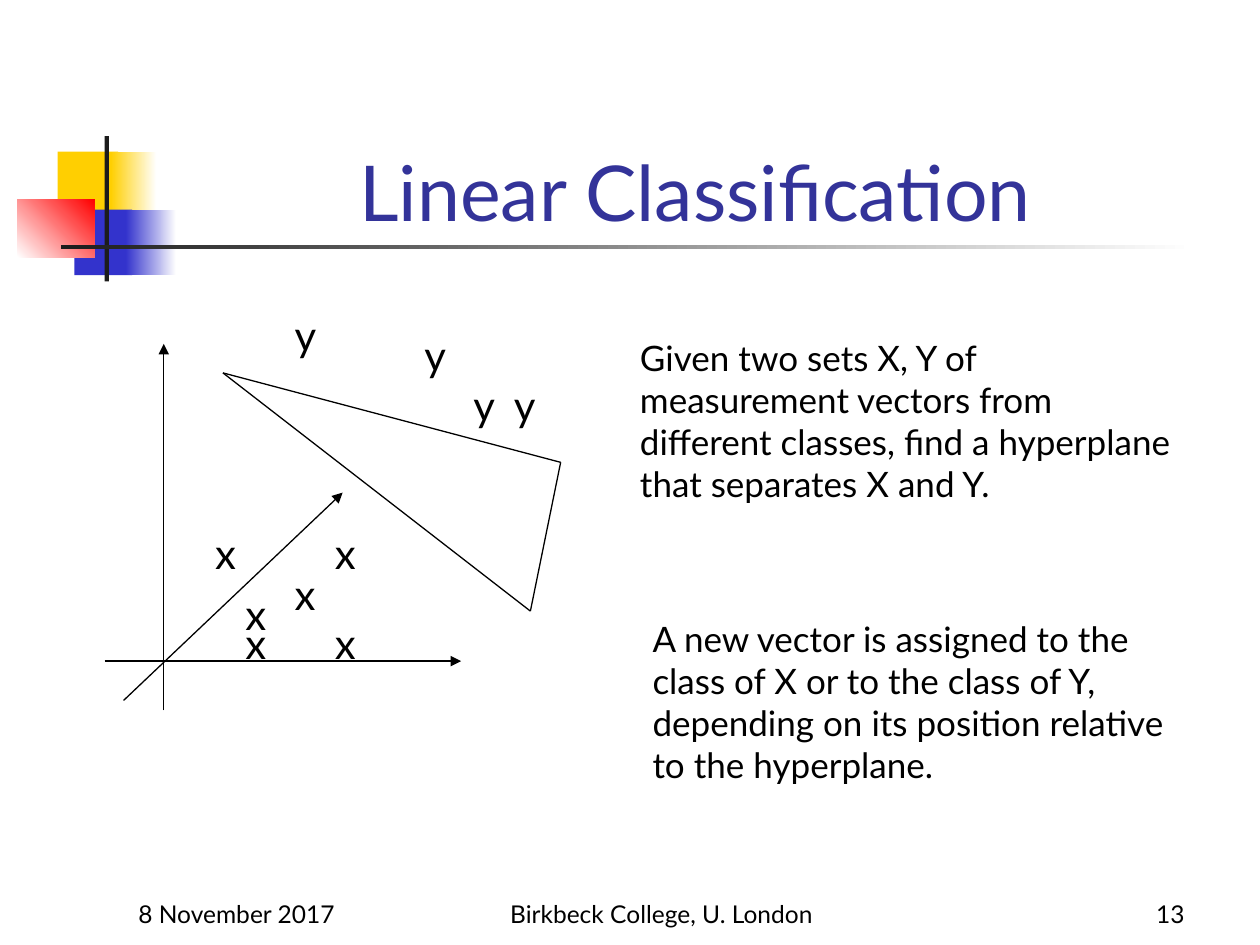
from lxml import etree
from pptx import Presentation
from pptx.dml.color import RGBColor
from pptx.enum import shapes, text
from pptx.oxml.ns import qn
from pptx.util import Pt

FONT = "Lato"
BLACK = RGBColor(0, 0, 0)
WHITE = RGBColor(255, 255, 255)
INK = RGBColor(0x1C, 0x1C, 0x1C)
GOLD = RGBColor(0xFF, 0xCF, 0x01)
BLUE = RGBColor(0x33, 0x33, 0xCC)
NAVY = RGBColor(0x33, 0x33, 0x99)
RED = RGBColor(0xFF, 0, 0)
LEFT, MID, RIGHT = text.PP_ALIGN.LEFT, text.PP_ALIGN.CENTER, text.PP_ALIGN.RIGHT
TOP, BOTTOM = text.MSO_ANCHOR.TOP, text.MSO_ANCHOR.BOTTOM

BARS = [
    ((33, 86.6, 34.5, 37.4), GOLD, None, 0),
    ((63.4, 86.6, 26, 37.4), GOLD, WHITE, 0),
    ((42.5, 119.8, 33, 37.4), BLUE, None, 0),
    ((72, 119.8, 28.8, 37.4), BLUE, WHITE, 0),
    ((10, 113.8, 44, 33.2), WHITE, RED, 45),
    ((59.8, 77.8, 2.5, 83), INK, None, 0),
    ((34.6, 140.1, 648, 2.5), INK, WHITE, 0),
]
AXES = [
    ((93.6, 406), (93.6, 196.5)),
    ((59.8, 377.8), (263.5, 377.8)),
    ((70.6, 400.3), (195.8, 281.5)),
]
PLANE = [(127.4, 213.1), (303.1, 349.2), (320.4, 264.2)]
MARKS = {
    "x": [(161.3, 321.1), (184.3, 298.1), (184.3, 349.2),
          (133.2, 349.2), (115.9, 298.1), (133.2, 332.6)],
    "y": [(161.3, 173.5), (235.4, 185), (263.5, 213.1), (286.6, 213.1)],
}
NOTES = [
    ((358.6, 188.6, 322.6, 103), [
        "Given two sets X, Y of",
        "measurement vectors from",
        "different classes, find a hyperplane",
        "that separates X and Y."]),
    ((365.8, 349.2, 307.4, 103), [
        "A new vector is assigned to the",
        "class of X or to the class of Y,",
        "depending on its position relative",
        "to the hyperplane."]),
]
FOOT = [
    ((72, 498.2, 150, 36), "8 November 2017", LEFT),
    ((264, 498.2, 228, 36), "Birkbeck College, U. London", MID),
    ((534, 498.2, 150, 36), "13", RIGHT),
]


def put(frame, lines, size=24, color=BLACK, align=LEFT, anchor=TOP, wrap=False):
    frame.word_wrap = wrap
    frame.vertical_anchor = anchor
    frame.text = "\n".join(lines)
    for para in frame.paragraphs:
        para.alignment = align
        for run in para.runs:
            run.font.name = FONT
            run.font.size = Pt(size)
            run.font.color.rgb = color


def label(slide, box, lines, **form):
    shape = slide.shapes.add_textbox(*map(Pt, box))
    put(shape.text_frame, lines, **form)


def bar(slide, box, start, end, angle):
    shape = slide.shapes.add_shape(shapes.MSO_SHAPE.RECTANGLE, *map(Pt, box))
    shape.shadow.inherit = False
    shape.line.fill.background()
    if end is None:
        shape.fill.solid()
        shape.fill.fore_color.rgb = start
    else:
        shape.fill.gradient()
        shape.fill.gradient_angle = angle
        for stop, color in zip(shape.fill.gradient_stops, (start, end)):
            stop.color.rgb = color


def line(slide, start, end, arrow=False):
    link = slide.shapes.add_connector(
        shapes.MSO_CONNECTOR.STRAIGHT, *map(Pt, start + end))
    link.line.color.rgb = BLACK
    link.line.width = Pt(0.75)
    if arrow:
        etree.SubElement(link.line._get_or_add_ln(), qn("a:tailEnd"), type="triangle")
    etree.SubElement(link._element.spPr, qn("a:effectLst"))


def title(slide, words):
    shape = slide.shapes.title
    shape.left, shape.top, shape.width, shape.height = map(Pt, (90.7, 49, 613.4, 90))
    put(shape.text_frame, [words], size=44, color=NAVY, align=MID,
        anchor=BOTTOM, wrap=True)


def main():
    deck = Presentation()
    deck.slide_width, deck.slide_height = Pt(720), Pt(540)
    slide = deck.slides.add_slide(deck.slide_layouts[5])
    for item in BARS:
        bar(slide, *item)
    for box, words, align in FOOT:
        label(slide, box, [words], size=14, align=align, anchor=BOTTOM, wrap=True)
    title(slide, "Linear Classification")
    for start, end in AXES:
        line(slide, start, end, arrow=True)
    for start, end in zip(PLANE, PLANE[1:] + PLANE[:1]):
        line(slide, start, end)
    for mark, spots in MARKS.items():
        for spot in spots:
            label(slide, spot + (26.6, 36), [mark])
    for box, lines in NOTES:
        label(slide, box, lines, size=20)
    deck.save("out.pptx")


if __name__ == "__main__":
    main()
